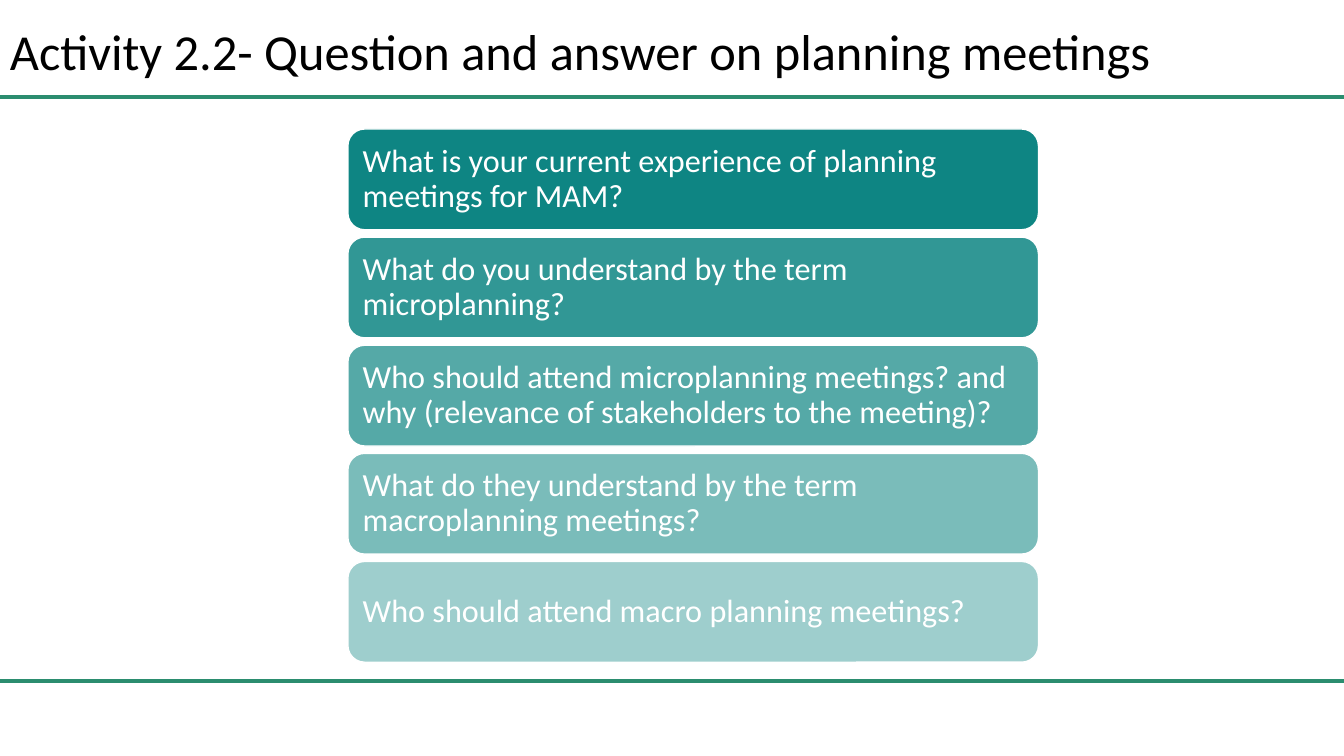
from lxml import etree
from pptx import Presentation
from pptx.dml.color import RGBColor
from pptx.enum.shapes import MSO_CONNECTOR, MSO_SHAPE
from pptx.enum.text import MSO_ANCHOR, PP_ALIGN
from pptx.oxml.ns import qn
from pptx.util import Inches, Pt

STRAIGHT = MSO_CONNECTOR.STRAIGHT
ROUNDED = MSO_SHAPE.ROUNDED_RECTANGLE
MIDDLE = MSO_ANCHOR.MIDDLE
LEFT = PP_ALIGN.LEFT

# Content
TITLE = "Activity 2.2- Question and answer on planning meetings"
QUESTIONS = [
    "What is your current experience of planning meetings for MAM?",
    "What do you understand by the term microplanning?",
    "Who should attend microplanning meetings? and why (relevance of stakeholders to the meeting)?",
    "What do they understand by the term macroplanning meetings?",
    "Who should attend macro planning meetings?",
]

THEME = {
    "font": "Calibri",
    "title_size": 36,
    "question_size": 23,
    "title": RGBColor(0x00, 0x00, 0x00),
    "question": RGBColor(0xFF, 0xFF, 0xFF),
    "card": RGBColor(0x0E, 0x85, 0x83),
    "rule": RGBColor(0x2B, 0x8D, 0x6F),
}

# Layout, in inches
SLIDE_W, SLIDE_H = 13.33, 7.5
RULES_Y = (6.76, 0.96)
CARD_X, CARD_Y, CARD_W, CARD_H = 3.45, 1.28, 6.85, 1
CARD_STEP = 1.0725
OPACITY_STEP = 15  # percent lost from one card to the next


def write(shape, text, size, color):
    frame = shape.text_frame
    frame.text = text
    frame.word_wrap = True
    frame.vertical_anchor = MIDDLE
    frame.margin_left = frame.margin_right = Inches(0.1)
    paragraph = frame.paragraphs[0]
    paragraph.alignment = LEFT
    paragraph.line_spacing = 0.9
    font = paragraph.runs[0].font
    font.name = THEME["font"]
    font.size = Pt(size)
    font.color.rgb = color


def add_rule(slide, y):
    rule = slide.shapes.add_connector(
        STRAIGHT, 0, Inches(y), Inches(SLIDE_W), Inches(y))
    rule.line.color.rgb = THEME["rule"]
    rule.line.width = Pt(3)
    etree.SubElement(rule._element.spPr, qn("a:effectLst"))


def add_card(slide, index, question):
    card = slide.shapes.add_shape(
        ROUNDED, Inches(CARD_X), Inches(CARD_Y + index * CARD_STEP),
        Inches(CARD_W), Inches(CARD_H))
    card.shadow.inherit = False
    card.fill.solid()
    card.fill.fore_color.rgb = THEME["card"]
    color = card._element.spPr.find(qn("a:solidFill"))[0]
    opacity = 100 - index * OPACITY_STEP
    etree.SubElement(color, qn("a:alpha"), val=str(opacity * 1000))
    card.line.color.rgb = THEME["question"]
    card.line.width = Pt(1)
    write(card, question, THEME["question_size"], THEME["question"])


def main():
    deck = Presentation()
    deck.slide_width, deck.slide_height = Inches(SLIDE_W), Inches(SLIDE_H)
    slide = deck.slides.add_slide(deck.slide_layouts[6])

    # Rules above and below the questions
    for y in RULES_Y:
        add_rule(slide, y)

    # Title
    heading = slide.shapes.add_textbox(0, Inches(0.02), Inches(13.4), Inches(1.04))
    write(heading, TITLE, THEME["title_size"], THEME["title"])

    # Question cards, fading downwards
    for index, question in enumerate(QUESTIONS):
        add_card(slide, index, question)

    deck.save("out.pptx")


if __name__ == "__main__":
    main()
